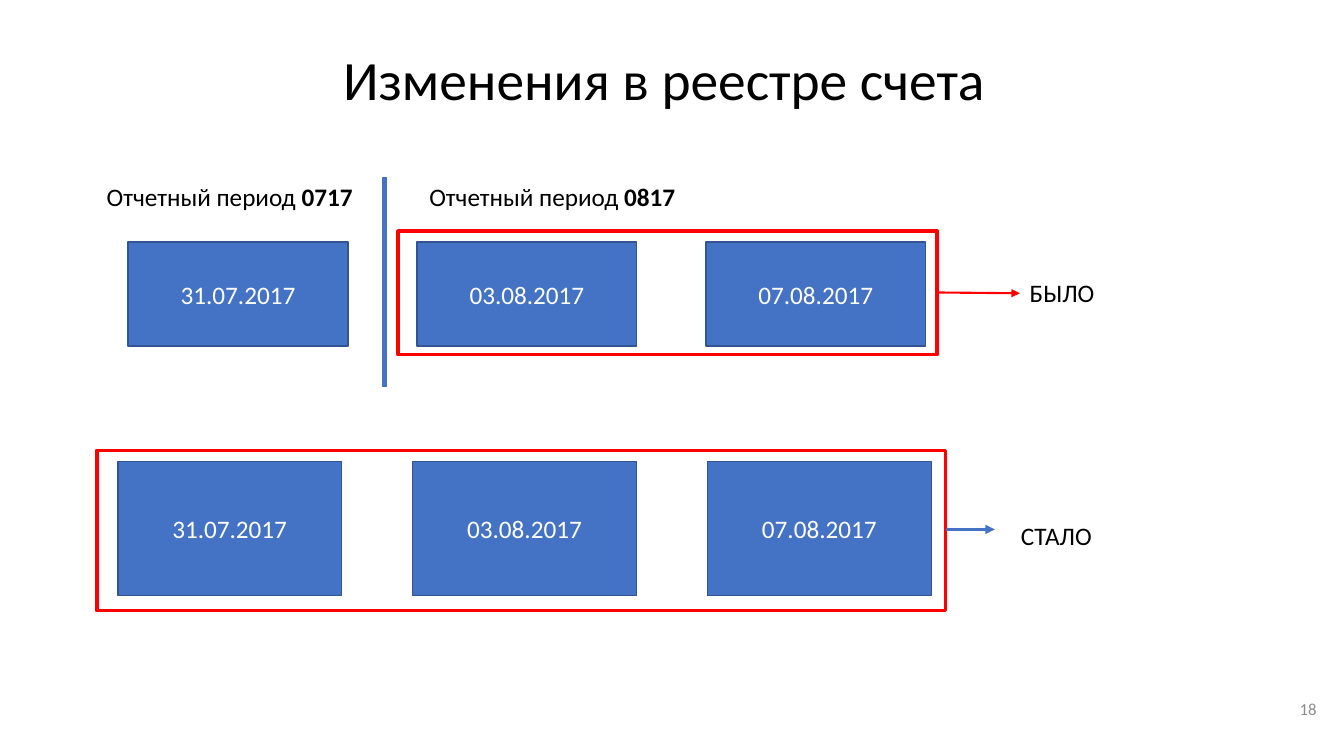
"""Build the slide that compares the account register before and after the change."""
from lxml import etree
from pptx import Presentation
from pptx.dml.color import RGBColor
from pptx.enum.shapes import MSO_CONNECTOR, MSO_SHAPE
from pptx.enum.text import MSO_ANCHOR as Anchor, MSO_AUTO_SIZE, PP_ALIGN as Align
from pptx.oxml.ns import qn
from pptx.util import Cm, Pt

FONT = "Calibri"
BLUE, DARK_BLUE, RED = "4472C4", "325491", "FF0000"
BLACK, WHITE, GRAY = "000000", "FFFFFF", "8C8C8C"

TITLE = "Изменения в реестре счета"
TITLE_BOX = (2.13, 1.12, 29.21, 1.93)
PAGE_NUMBER = "18"
PAGE_NUMBER_BOX = (32.41, 17.35, 1.02, 1.02)
DATES = ["31.07.2017", "03.08.2017", "07.08.2017"]
PERIODS = [
    ("0717", (2.44, 4.45, 7.24, 1.04)),
    ("0817", (10.57, 4.45, 7.7, 1.04)),
]
DIVIDER = (9.7, 4.45, 9.7, 9.75)
STATES = [
    {
        "label": "БЫЛО", "label_box": (25.7, 6.86, 2.31, 0.86),
        "first_date": (3.23, 6.1, 5.54, 2.62), "step": 7.28,
        "frame": (10.03, 5.82, 13.59, 3.12),
        "arrow": (23.62, 7.37, 25.7, 7.39), "arrow_style": (RED, 1.5),
    },
    {
        "label": "СТАЛО", "label_box": (25.48, 12.98, 2.54, 1.35),
        "first_date": (2.97, 11.63, 5.64, 3.38), "step": 7.43,
        "frame": (2.44, 11.35, 21.39, 4.04),
        "arrow": (23.84, 13.34, 25.07, 13.34), "arrow_style": (BLUE, 2.25),
    },
]


def color(value):
    return RGBColor.from_string(value)


def lengths(values):
    return [Cm(value) for value in values]


def write(shape, parts, size, text_color, align=Align.LEFT, anchor=Anchor.TOP):
    """Write one paragraph from (text, bold) parts."""
    frame = shape.text_frame
    frame.word_wrap = True
    frame.auto_size = MSO_AUTO_SIZE.NONE
    frame.vertical_anchor = anchor
    paragraph = frame.paragraphs[0]
    paragraph.alignment = align
    for text, bold in parts:
        run = paragraph.add_run()
        run.text = text
        run.font.name = FONT
        run.font.size = Pt(size)
        run.font.bold = bold
        run.font.color.rgb = color(text_color)
    return paragraph


def add_text(slide, box, parts, size=18, text_color=BLACK, **layout):
    write(slide.shapes.add_textbox(*lengths(box)), parts, size, text_color, **layout)


def add_box(slide, box, line_color, width, fill=None):
    shape = slide.shapes.add_shape(MSO_SHAPE.RECTANGLE, *lengths(box))
    shape.shadow.inherit = False
    if fill:
        shape.fill.solid()
        shape.fill.fore_color.rgb = color(fill)
    else:
        shape.fill.background()
    shape.line.color.rgb = color(line_color)
    shape.line.width = Pt(width)
    return shape


def add_line(slide, ends, line_color, width, arrow=False):
    connector = slide.shapes.add_connector(MSO_CONNECTOR.STRAIGHT, *lengths(ends))
    connector.line.color.rgb = color(line_color)
    connector.line.width = Pt(width)
    if arrow:
        etree.SubElement(connector.line._get_or_add_ln(), qn("a:tailEnd"), type="triangle")
    etree.SubElement(connector._element.spPr, qn("a:effectLst"))


def add_state(slide, state):
    left, top, width, height = state["first_date"]
    for index, date in enumerate(DATES):
        box = (left + index * state["step"], top, width, height)
        shape = add_box(slide, box, DARK_BLUE, 1, BLUE)
        write(shape, [(date, False)], 18, WHITE, Align.CENTER, Anchor.MIDDLE)
    add_box(slide, state["frame"], RED, 2.5)
    add_line(slide, state["arrow"], *state["arrow_style"], arrow=True)
    add_text(slide, state["label_box"], [(state["label"], False)])


def main():
    presentation = Presentation()
    presentation.slide_width, presentation.slide_height = Cm(33.87), Cm(19.05)
    slide = presentation.slides.add_slide(presentation.slide_layouts[5])

    title = slide.shapes.title
    title.left, title.top, title.width, title.height = lengths(TITLE_BOX)
    paragraph = write(title, [(TITLE, False)], 39.6, BLACK, Align.CENTER, Anchor.MIDDLE)
    paragraph.line_spacing = 0.9

    add_line(slide, DIVIDER, BLUE, 3.5)
    for period, box in PERIODS:
        add_text(slide, box, [("Отчетный период ", False), (period, True)])
    for state in STATES:
        add_state(slide, state)
    add_text(slide, PAGE_NUMBER_BOX, [(PAGE_NUMBER, False)], 12, GRAY,
             align=Align.RIGHT, anchor=Anchor.MIDDLE)

    presentation.save("out.pptx")


if __name__ == "__main__":
    main()
